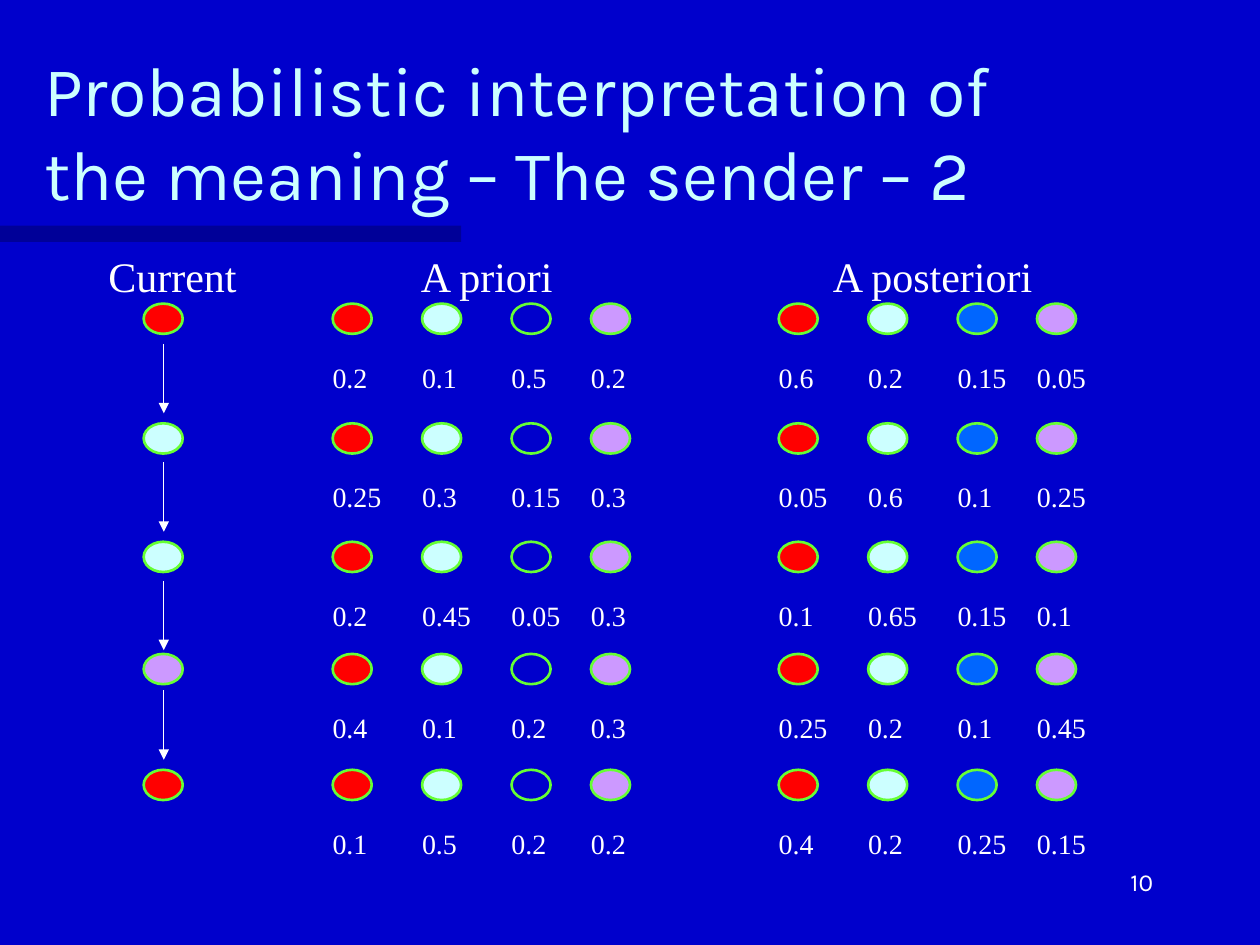
import pptx
import pptx.util
import pptx.dml.color
import pptx.enum.shapes
import pptx.enum.text
import pptx.oxml
import pptx.oxml.ns

COLORS = {
    "background": "0000CC", "bar": "000066", "title": "CCFFFF", "text": "FFFFFF",
    "outline": "66FF33", "red": "FF0000", "pale": "CCFFFF", "hidden": "0000CC",
    "blue": "0066FF", "violet": "CC99FF",
}
RGB = {name: pptx.dml.color.RGBColor.from_string(value) for name, value in COLORS.items()}
SHAPES = pptx.enum.shapes.MSO_SHAPE
ALIGN = pptx.enum.text.PP_ALIGN

deck = pptx.Presentation()
deck.slide_width = pptx.util.Inches(10)
deck.slide_height = pptx.util.Inches(7.5)
column = deck.slide_width / 100
row = deck.slide_height / 75

slide = deck.slides.add_slide(deck.slide_layouts[5])
slide.background.fill.solid()
slide.background.fill.fore_color.rgb = RGB["background"]


def cells(left, top, width, height):
    return [round(left * column), round(top * row), round(width * column), round(height * row)]


def write(area, text, size, face="Times New Roman", inset=1, align=ALIGN.LEFT, stops=()):
    frame = slide.shapes.add_textbox(*cells(*area)).text_frame
    frame.word_wrap = True
    frame.margin_left = round(inset * column)
    paragraph = frame.paragraphs[0]
    paragraph.text = text
    paragraph.alignment = align
    if stops:
        tabs = pptx.oxml.ns.qn("a:tabLst")
        tab_list = paragraph._p.get_or_add_pPr().makeelement(tabs, {})
        paragraph._p.get_or_add_pPr().append(tab_list)
        for stop in stops:
            position = round((stop - area[0] - inset) * column)
            tab = tab_list.makeelement(pptx.oxml.ns.qn("a:tab"), {"pos": str(position), "algn": "l"})
            tab_list.append(tab)
    for key, value in {"name": face, "size": pptx.util.Pt(size)}.items():
        setattr(paragraph.font, key, value)
    paragraph.font.color.rgb = RGB["text"]


bar = slide.shapes.add_shape(SHAPES.RECTANGLE, *cells(0, 17.9, 36.6, 1.3))
bar.shadow.inherit = False
bar.fill.solid()
bar.fill.fore_color.rgb = RGB["bar"]
bar.line.fill.background()
bar_color = bar._element.spPr.find(".//" + pptx.oxml.ns.qn("a:srgbClr"))
bar_color.append(bar_color.makeelement(pptx.oxml.ns.qn("a:alpha"), {"val": "50000"}))

title = slide.shapes.title
for key, value in zip(("left", "top", "width", "height"), cells(2.5, 5, 85, 12.5)):
    setattr(title, key, value)
title.text_frame.text = "Probabilistic interpretation of the meaning – The sender – 2"
title_frame = {
    "vertical_anchor": pptx.enum.text.MSO_ANCHOR.BOTTOM,
    "auto_size": pptx.enum.text.MSO_AUTO_SIZE.NONE,
    "word_wrap": True,
}
for key, value in title_frame.items():
    setattr(title.text_frame, key, value)
heading = title.text_frame.paragraphs[0]
heading.alignment = ALIGN.LEFT
for key, value in {"name": "Karla", "size": pptx.util.Pt(40)}.items():
    setattr(heading.font, key, value)
heading.font.color.rgb = RGB["title"]

write((71.7, 68.3, 20.8, 5), "10", 14, face="Karla", align=ALIGN.RIGHT)
write((5.9, 19.4, 81.1, 5), "Current\tA priori\tA posteriori", 24, inset=2.7, stops=(33.4, 66.1))

group_starts = (26.4, 61.8)
offsets = (0, 7.1, 14.2, 20.5)
meaning_columns = [start + offset for start in group_starts for offset in offsets]
meanings = ("red", "pale", "hidden", "violet", "red", "pale", "blue", "violet")
steps = (
    (24.1, "red", "0.2 0.1 0.5 0.2 0.6 0.2 0.15 0.05"),
    (33.6, "pale", "0.25 0.3 0.15 0.3 0.05 0.6 0.1 0.25"),
    (43, "pale", "0.2 0.45 0.05 0.3 0.1 0.65 0.15 0.1"),
    (51.9, "violet", "0.4 0.1 0.2 0.3 0.25 0.2 0.1 0.45"),
    (61.1, "red", "0.1 0.5 0.2 0.2 0.4 0.2 0.25 0.15"),
)
for top, current, probabilities in steps:
    for left, meaning in zip([11.4] + meaning_columns, (current,) + meanings):
        oval = slide.shapes.add_shape(SHAPES.OVAL, *cells(left, top, 3.1, 2.4))
        oval.shadow.inherit = False
        oval.fill.solid()
        oval.fill.fore_color.rgb = RGB[meaning]
        oval.line.color.rgb = RGB["outline"]
        oval.line.width = pptx.util.Pt(1.5)
    write((24.8, top + 4, 69.3, 3.7), probabilities.replace(" ", "\t"), 16,
          inset=1.6, stops=meaning_columns[1:])

for top in (27.3, 36.7, 46.1, 54.8):
    x, start, _, length = cells(13, top, 0, 5.5)
    arrow = slide.shapes.add_connector(
        pptx.enum.shapes.MSO_CONNECTOR.STRAIGHT, x, start, x, start + length)
    arrow.line.color.rgb = RGB["text"]
    arrow.line.width = pptx.util.Pt(0.75)
    outline = arrow.line._get_or_add_ln()
    outline.append(outline.makeelement(pptx.oxml.ns.qn("a:tailEnd"), {"type": "triangle"}))
    properties = arrow._element.spPr
    properties.append(properties.makeelement(pptx.oxml.ns.qn("a:effectLst"), {}))

deck.save("out.pptx")
